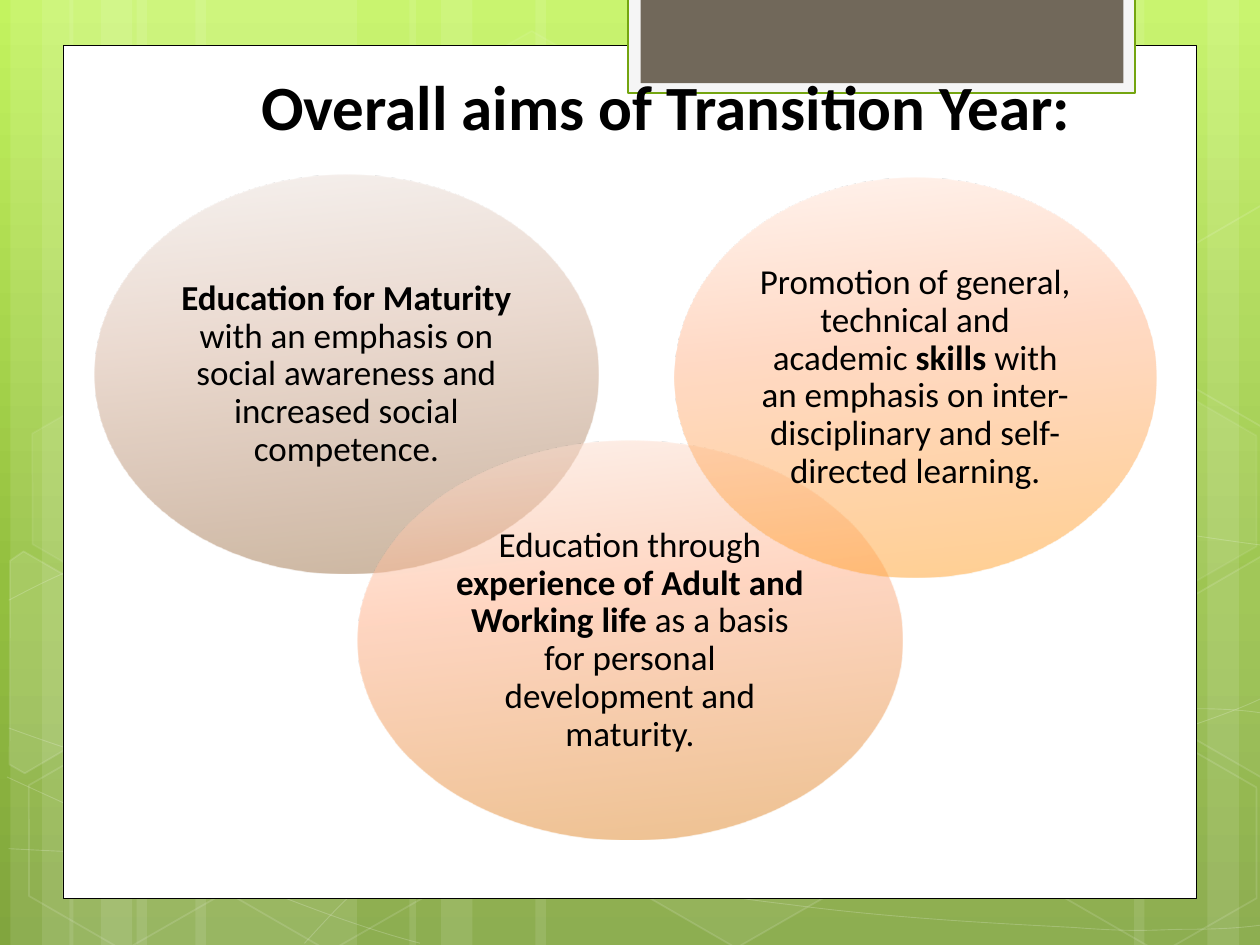
from dataclasses import dataclass

from lxml import etree
from pptx import Presentation
from pptx.dml.color import RGBColor
from pptx.enum.shapes import MSO_SHAPE
from pptx.enum.text import MSO_ANCHOR, MSO_AUTO_SIZE, PP_ALIGN
from pptx.oxml.ns import qn
from pptx.util import Pt

RECT, OVAL, HEXA = MSO_SHAPE.RECTANGLE, MSO_SHAPE.OVAL, MSO_SHAPE.HEXAGON
MIDDLE, TOP = MSO_ANCHOR.MIDDLE, MSO_ANCHOR.TOP
CENTER, NO_FIT = PP_ALIGN.CENTER, MSO_AUTO_SIZE.NONE

WHITE = RGBColor(0xFF, 0xFF, 0xFF)
BLACK = RGBColor(0, 0, 0)
SMOKE = RGBColor(0xF5, 0xF5, 0xF5)
GREEN = RGBColor(0x74, 0xA5, 0x10)
TAUPE = RGBColor(0x71, 0x68, 0x5A)
LIME = (RGBColor(0xC3, 0xF3, 0x5F), RGBColor(0x93, 0xBF, 0x3F), RGBColor(0x81, 0xA5, 0x3E))
BROWN = (RGBColor(0xEE, 0xE5, 0xE0), RGBColor(0xD8, 0xB6, 0xA2), RGBColor(0x99, 0x6B, 0x3F))
CORAL = (RGBColor(0xFD, 0xE4, 0xD8), RGBColor(0xFF, 0xAE, 0x85), RGBColor(0xDD, 0x84, 0x1F))
AMBER = (RGBColor(0xFF, 0xE9, 0xDE), RGBColor(0xFF, 0xB7, 0x8F), RGBColor(0xFF, 0xA0, 0x21))
FONT = "Calibri"
SLIDE_W, SLIDE_H = 720, 540
TILT = 30


@dataclass
class Hexagon:
    x: float
    y: float
    fill: int  # opacity in percent, 0 for no fill
    edge: int
    dots: tuple = ()  # corners from x, y where the outline is cut


@dataclass
class Aim:
    box: tuple
    hues: tuple
    runs: list  # (text, bold)


# Left and width of the pale vertical stripes
BANDS = [(78, 126), (6, 36), (24, 60), (111.6, 126), (39.6, 36), (57.6, 60),
         (528, 126), (690, 36), (648, 60), (306, 222), (234, 36), (252, 60)]

# Bezier chains: a start, then two handles and an end for each piece
WAVES = [
    [(5, 485), (44, 487), (83, 489), (137, 488), (191, 487), (258, 486), (330, 479),
     (402, 472), (504, 458), (570, 444), (636, 431), (703, 409), (725, 397)],
    [(5, 343), (26, 332), (47, 321), (87, 310), (128, 300), (186, 284), (250, 279),
     (314, 274), (392, 273), (471, 279), (550, 284), (682, 307), (725, 312)],
    [(4, 444), (91, 484), (178, 523), (240, 539)],
    [(5, 416), (27, 424), (50, 432), (92, 444), (134, 454), (197, 472), (257, 485),
     (317, 497), (392, 510), (452, 517), (512, 525), (576, 528), (614, 530),
     (652, 533), (662, 531), (680, 531), (699, 531), (712, 530), (725, 528)],
    [(174, 539), (187, 525), (200, 510), (217, 498), (235, 485), (259, 470), (279, 460),
     (300, 450), (312, 446), (338, 438), (364, 431), (413, 421), (438, 416),
     (464, 411), (467, 411), (490, 410), (512, 408), (547, 405), (572, 405),
     (597, 404), (638, 405), (638, 405), (654, 405), (670, 405), (686, 405),
     (699, 405), (711, 406), (718, 407), (724, 408), (722, 407), (724, 408)],
]

LEFT_CUT = ((0, 8.5), (4, 0), (68, 0), (99, 55), (68, 109.5), (58, 109.5))
RIGHT_CUT = ((0, 54), (31, 0), (37.5, 0), (98, 104), (94.5, 109.5), (31.5, 109.5))
HEXAGONS = [
    Hexagon(240.5, 26, 4, 8), Hexagon(358, 424, 6, 12),
    Hexagon(-24, 330.5, 10, 12, LEFT_CUT), Hexagon(8, 425.5, 0, 12),
    Hexagon(10, 224.5, 7, 8), Hexagon(125.5, 426, 0, 12),
    Hexagon(542, 326, 10, 12), Hexagon(600.5, 427, 0, 12), Hexagon(600.5, 226, 7, 8),
    Hexagon(660, 319.5, 4, 12, RIGHT_CUT), Hexagon(660, 119, 0, 12, RIGHT_CUT),
]

AIMS = [
    Aim((54, 100, 288, 228), BROWN, [
        ("Education for Maturity ", True),
        ("with an emphasis on social awareness and increased social competence.", False)]),
    Aim((204.5, 252, 311, 228), CORAL, [
        ("Education through ", False),
        ("experience of Adult and Working life ", True),
        ("as a basis for personal development and maturity.", False)]),
    Aim((385.5, 101.8, 275, 228), AMBER, [
        ("Promotion of general, technical and academic ", False),
        ("skills", True),
        (" with an emphasis on inter-disciplinary and self-directed learning.", False)]),
]


def paint(fill, color: RGBColor, alpha: int = 100) -> None:
    """Solid fill with an opacity in percent; 0 means no fill."""
    if alpha == 0:
        fill.background()
        return
    fill.solid()
    fill.fore_color.rgb = color
    if alpha < 100:
        tone = fill._xPr.find(".//" + qn("a:srgbClr"))
        etree.SubElement(tone, qn("a:alpha"), val=str(alpha * 1000))


def blend(fill, hues: tuple, mid: int, angle: int, alpha: int = 100) -> None:
    """Three-stop linear gradient, angle clockwise in degrees."""
    fill.gradient()
    fill.gradient_angle = 360 - angle
    stops = fill._xPr.find(".//" + qn("a:gsLst"))
    for old in list(stops):
        stops.remove(old)
    for pos, hue in zip((0, mid, 100), hues):
        stop = etree.SubElement(stops, qn("a:gs"), pos=str(pos * 1000))
        tone = etree.SubElement(stop, qn("a:srgbClr"), val=str(hue))
        if alpha < 100:
            etree.SubElement(tone, qn("a:alpha"), val=str(alpha * 1000))


def edge(shape, color: RGBColor, width: float, alpha: int = 100) -> None:
    shape.line.width = Pt(width)
    paint(shape.line.fill, color, alpha)


def add(shapes, kind, box: tuple):
    """Preset shape with neither shadow nor line."""
    shape = shapes.add_shape(kind, *map(Pt, box))
    shape.shadow.inherit = False
    shape.line.fill.background()
    return shape


def trace(shapes, dots: list, close: bool):
    dots = [(Pt(x), Pt(y)) for x, y in dots]
    pen = shapes.build_freeform(*dots[0])
    pen.add_line_segments(dots[1:], close=close)
    shape = pen.convert_to_shape()
    shape.shadow.inherit = False
    return shape


def bend(shape) -> None:
    """Turn each three straight pieces into one cubic Bezier."""
    lines = list(shape._element.iter(qn("a:lnTo")))
    for i in range(0, len(lines), 3):
        arc = etree.Element(qn("a:cubicBezTo"))
        lines[i].addprevious(arc)
        for line in lines[i:i + 3]:
            arc.append(line[0])
            line.getparent().remove(line)


def write(frame, runs: list, size: float, anchor) -> None:
    frame.word_wrap = True
    frame.auto_size = NO_FIT
    frame.vertical_anchor = anchor
    para = frame.paragraphs[0]
    para.alignment = CENTER
    for text, bold in runs:
        run = para.add_run()
        run.text = text
        font = run.font
        font.name, font.size, font.bold = FONT, Pt(size), bold
        font.color.rgb = BLACK


def backdrop(slide) -> None:
    shapes = slide.shapes
    blend(slide.background.fill, LIME, 62, 90)
    for left, width in BANDS:
        paint(add(shapes, RECT, (left, 0, width, SLIDE_H)).fill, WHITE, 10)
    for chain in WAVES:
        wave = trace(shapes, chain, False)
        bend(wave)
        wave.fill.background()
        edge(wave, WHITE, 0.5, 20)
    for item in HEXAGONS:
        if item.dots:
            cell = trace(shapes, [(item.x + x, item.y + y) for x, y in item.dots], True)
        else:
            cell = add(shapes, HEXA, (item.x, item.y, 126, 109.5))
            cell.adjustments[0] = 0.29
        cell.rotation = TILT
        paint(cell.fill, WHITE, item.fill)
        edge(cell, WHITE, 1, item.edge)


def panel(shapes) -> None:
    page = add(shapes, RECT, (36, 26, 648, 487.2))
    paint(page.fill, WHITE)
    edge(page, BLACK, 0.5)
    tab = add(shapes, RECT, (359, -1.5, 289.5, 54.7))
    paint(tab.fill, SMOKE)
    edge(tab, GREEN, 1.25)
    paint(add(shapes, RECT, (366, -1.5, 276, 49)).fill, TAUPE)


def heading(shapes) -> None:
    title = shapes.title
    title.left, title.top, title.width, title.height = map(Pt, (82, 35, 597, 94))
    write(title.text_frame, [("Overall aims of Transition Year:", True)], 36, TOP)
    shapes._spTree.append(title._element)  # in front of the panel


def circle(shapes, aim: Aim) -> None:
    oval = add(shapes, OVAL, aim.box)
    blend(oval.fill, aim.hues, 40, 84, 50)
    frame = oval.text_frame
    frame.margin_left = frame.margin_right = frame.margin_top = frame.margin_bottom = Pt(6)
    write(frame, aim.runs, 20, MIDDLE)
    frame.paragraphs[0].line_spacing = 0.9


def main() -> None:
    deck = Presentation()
    deck.slide_width, deck.slide_height = Pt(SLIDE_W), Pt(SLIDE_H)
    slide = deck.slides.add_slide(deck.slide_layouts[5])
    backdrop(slide)
    panel(slide.shapes)
    heading(slide.shapes)
    for aim in AIMS:
        circle(slide.shapes, aim)
    deck.save("out.pptx")


if __name__ == "__main__":
    main()
